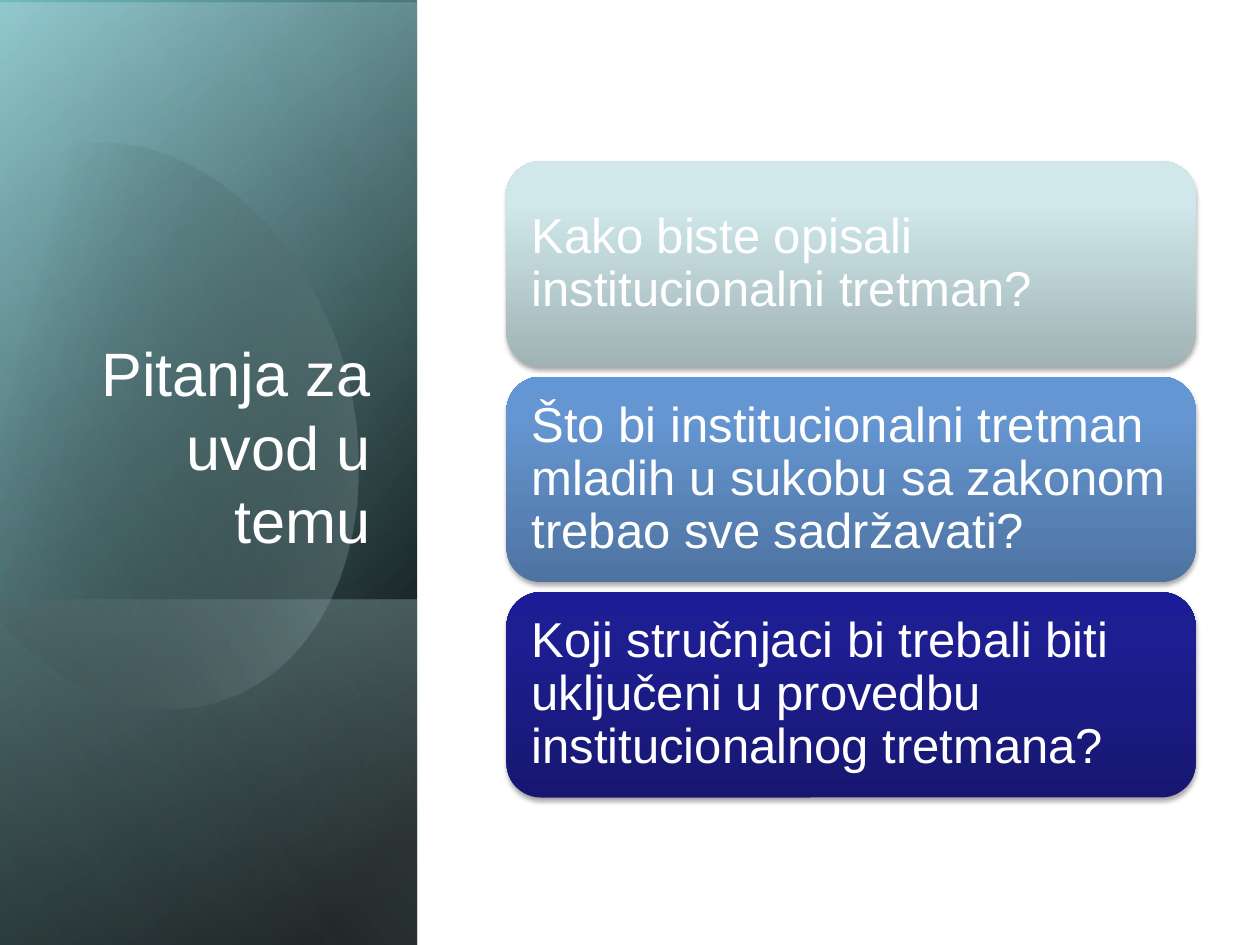
import math
import pptx
import pptx.util
import pptx.dml.color
import pptx.enum.shapes
import pptx.enum.text
import pptx.oxml
import pptx.oxml.ns
import lxml.etree

Inches = pptx.util.Inches
Pt = pptx.util.Pt
SHAPES = pptx.enum.shapes.MSO_SHAPE
ANCHOR = pptx.enum.text.MSO_ANCHOR
ALIGN = pptx.enum.text.PP_ALIGN
qn = pptx.oxml.ns.qn

FONT = "Arial"
QUESTIONS = [
    ("Kako biste opisali institucionalni tretman?", ("A0B3B5", "D0E8EB", "D1EAEC")),
    ("Što bi institucionalni tretman mladih u sukobu sa zakonom trebao sve sadržavati?",
     ("4E73A1", "6596D1", "6396D4")),
    ("Koji stručnjaci bi trebali biti uključeni u provedbu institucionalnog tretmana?",
     ("171771", "1E1E93", "1C1C96")),
]
OVAL_START = (0.96, 1.14)
OVAL_CURVES = [
    ((1.71, 1.22), (2.44, 1.92), (2.73, 2.9)),
    ((3.07, 4.12), (2.62, 5.31), (1.71, 5.57)),
    ((1.14, 5.74), (0.53, 5.5), (0.07, 5)),
    ((-0.03, 4.88), (-0.03, 4.88), (-0.03, 4.88)),
    ((-0.25, 1.66), (-0.25, 1.66), (-0.25, 1.66)),
    ((-0.15, 1.54), (-0.15, 1.54), (-0.15, 1.54)),
    ((0.02, 1.37), (0.22, 1.25), (0.45, 1.18)),
    ((0.62, 1.13), (0.79, 1.12), (0.96, 1.14)),
]


def color(value):
    return pptx.dml.color.RGBColor.from_string(value)


def paint(shape, angle, stops):
    shape.shadow.inherit = False
    shape.line.fill.background()
    shape.fill.gradient()
    shape.fill.gradient_angle = 360 - angle
    stop_list = shape._element.spPr.find(qn("a:gradFill")).find(qn("a:gsLst"))
    for old in list(stop_list):
        stop_list.remove(old)
    for position, value, opacity in stops:
        stop = lxml.etree.SubElement(stop_list, qn("a:gs"), pos=str(position * 1000))
        tone = lxml.etree.SubElement(stop, qn("a:srgbClr"), val=value)
        if opacity < 100:
            lxml.etree.SubElement(tone, qn("a:alpha"), val=str(opacity * 1000))


def add_shadow(shape):
    effects = shape._element.spPr.find(qn("a:effectLst"))
    shadow = lxml.etree.SubElement(
        effects, qn("a:outerShdw"), blurRad=str(Pt(3.1)), dist=str(Pt(1.8)),
        dir="5400000", rotWithShape="0")
    tone = lxml.etree.SubElement(shadow, qn("a:srgbClr"), val="000000")
    lxml.etree.SubElement(tone, qn("a:alpha"), val="35000")


def add_text(page, box, text, size, anchor, align, insets, spacing=None):
    frame = page.shapes.add_textbox(*map(Inches, box)).text_frame
    frame.word_wrap = True
    frame.vertical_anchor = anchor
    frame.margin_left = frame.margin_right = Inches(insets[0])
    frame.margin_top = frame.margin_bottom = Inches(insets[1])
    para = frame.paragraphs[0]
    para.text = text
    para.alignment = align
    para.line_spacing = spacing
    para.font.name = FONT
    para.font.size = Pt(size)
    para.font.color.rgb = color("FFFFFF")


def add_layer(page, box, angle, stops):
    left, top, width, height = box
    layer = page.shapes.add_shape(
        SHAPES.RECTANGLE, Inches(left + (width - height) / 2),
        Inches(top + (height - width) / 2), Inches(height), Inches(width))
    layer.rotation = 90
    layer._element.spPr.find(qn("a:xfrm")).set("flipH", "1")
    paint(layer, angle, stops)


def curve_points(start, curves, steps=16):
    points = [start]
    for first, second, end in curves:
        origin = points[-1]
        for step in range(1, steps + 1):
            t = step / steps
            weights = ((1 - t) ** 3, 3 * t * (1 - t) ** 2, 3 * t * t * (1 - t), t ** 3)
            points.append(tuple(
                sum(weight * point[axis] for weight, point
                    in zip(weights, (origin, first, second, end)))
                for axis in (0, 1)))
    return points


def add_oval(page, box, rotation):
    left, top, width, height = box
    center_x, center_y = left + width / 2, top + height / 2
    turn = math.radians(-rotation)
    points = []
    for x, y in curve_points(OVAL_START, OVAL_CURVES):
        dx, dy = x - center_x, y - center_y
        points.append((
            Inches(center_x + dx * math.cos(turn) - dy * math.sin(turn)),
            Inches(center_y + dx * math.sin(turn) + dy * math.cos(turn))))
    builder = page.shapes.build_freeform(*points[0])
    builder.add_line_segments(points[1:], close=True)
    oval = builder.convert_to_shape()
    oval.rotation = rotation
    paint(oval, 30, [(29, "000000", 0), (100, "BBE0E3", 43)])


def add_title_panel(page, box):
    left, top, width, height = box
    floor = 2.74
    add_layer(page, box, 50, [(8, "000000", 100), (100, "72BFC5", 100)])
    add_layer(page, (left, top + 0.02, width, height), 30,
              [(0, "000000", 0), (99, "BBE0E3", 46)])
    add_layer(page, (left, top + height - floor, width, floor), 130,
              [(2, "BBE0E3", 29), (100, "000000", 30)])
    add_oval(page, (left - 0.41, top + 1.06, 3.2, 4.57), 343.9)
    add_layer(page, box, 120, [(0, "000000", 0), (99, "D6ECEE", 11)])
    add_text(page, (left + 0.48, top + 1.84, 2.56, 2.62), "Pitanja za uvod u temu",
             35, ANCHOR.BOTTOM, ALIGN.RIGHT, (0.1, 0.05))


def add_questions(page, box):
    left, top, width, height = box
    gap, pad = 0.08, 0.08
    card_height = (height - gap * (len(QUESTIONS) - 1)) / len(QUESTIONS)
    for index, (question, tones) in enumerate(QUESTIONS):
        card_top = top + index * (card_height + gap)
        card = page.shapes.add_shape(
            SHAPES.ROUNDED_RECTANGLE,
            *map(Inches, (left, card_top, width, card_height)))
        paint(card, 270, [(place, tone, 100) for place, tone in zip((0, 80, 100), tones)])
        add_shadow(card)
        add_text(page, (left + pad, card_top + pad, width - 2 * pad, card_height - 2 * pad),
                 question, 28, ANCHOR.MIDDLE, ALIGN.LEFT, (0.12, 0.12), 0.9)


def main():
    deck = pptx.Presentation()
    deck.slide_width = Inches(10)
    deck.slide_height = Inches(7.5)
    page = deck.slides.add_slide(deck.slide_layouts[6])
    add_title_panel(page, (0, 0, 3.31, 7.5))
    add_questions(page, (4.02, 1.28, 5.47, 5.05))
    deck.save("out.pptx")


if __name__ == "__main__":
    main()
